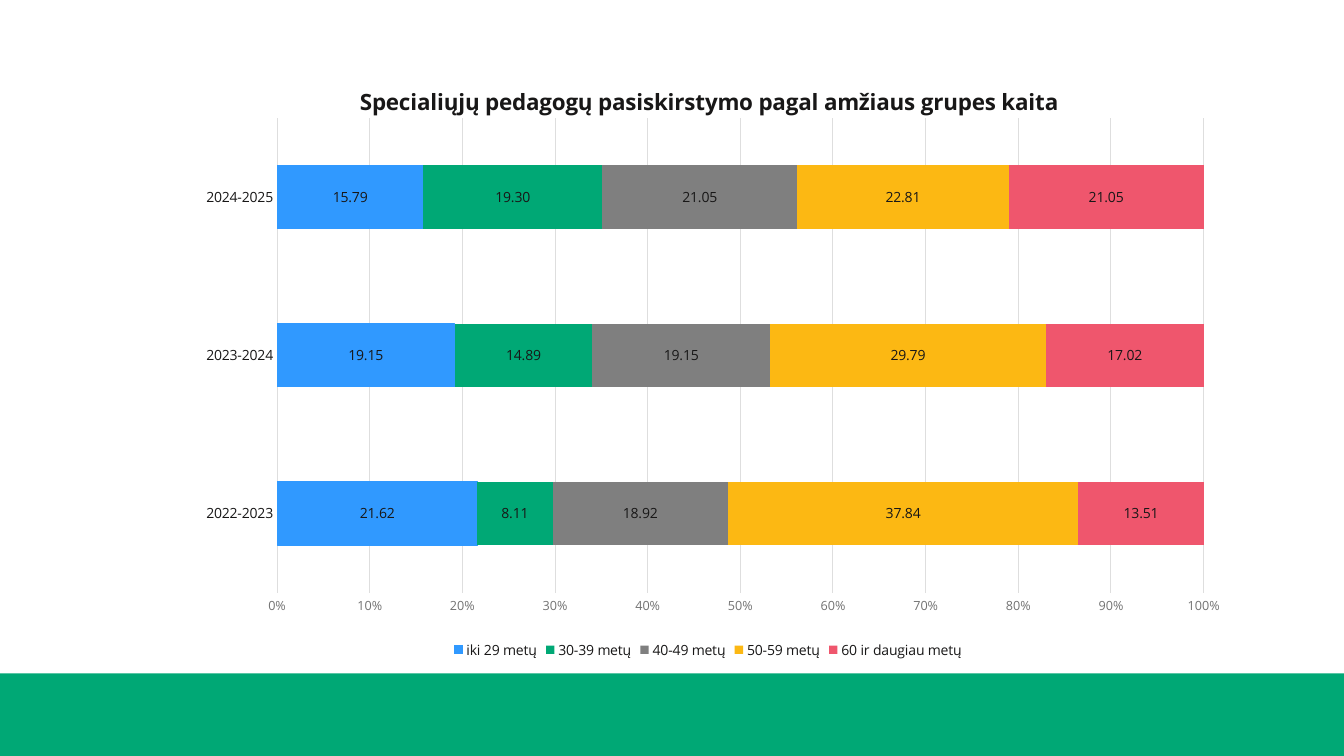
"""Build a slide with a stacked bar chart of special educators by age group."""
from dataclasses import dataclass

from lxml.etree import SubElement
from pptx import Presentation
from pptx.chart.data import CategoryChartData as ChartData
from pptx.dml.color import RGBColor
from pptx.enum.chart import XL_CHART_TYPE as ChartType
from pptx.enum.chart import XL_LEGEND_POSITION as LegendPosition
from pptx.enum.chart import XL_TICK_MARK as TickMark
from pptx.enum.shapes import MSO_SHAPE as Shape
from pptx.oxml.ns import qn
from pptx.util import Inches, Pt

WIDTH, HEIGHT = Inches(13.33), Inches(7.5)
FONT = "Open Sans"
INK, GREY, RULE, GREEN = "181717", "727272", "DEDEDE", "00A875"
YEARS = ("2022-2023", "2023-2024", "2024-2025")
TITLE = "Specialiųjų pedagogų pasiskirstymo pagal amžiaus grupes kaita"


@dataclass(frozen=True)
class Area:
    left: float
    top: float
    width: float = 0
    height: float = 0

    def on_slide(self) -> tuple[int, int, int, int]:
        return (int(WIDTH * self.left / 100), int(HEIGHT * self.top / 100),
                int(WIDTH * self.width / 100), int(HEIGHT * self.height / 100))


@dataclass(frozen=True)
class AgeGroup:
    name: str
    shares: tuple[float, ...]
    color: str


BAND = Area(0, 89.07, 100, 10.93)
CHART = Area(13.58, 7.87, 78.17, 79.87)
PLOT = Area(9, 9.7, 88.2, 78.6)
HEADING = Area(16.5, 3.5)
AGE_GROUPS = (
    AgeGroup("iki 29 metų", (21.62, 19.15, 15.79), "3099FF"),
    AgeGroup("30-39 metų", (8.11, 14.89, 19.3), GREEN),
    AgeGroup("40-49 metų", (18.92, 19.15, 21.05), "7F7F7F"),
    AgeGroup("50-59 metų", (37.84, 29.79, 22.81), "FCB813"),
    AgeGroup("60 ir daugiau metų", (13.51, 17.02, 21.05), "EF566D"),
)


def rgb(color: str) -> RGBColor:
    return RGBColor.from_string(color)


def set_font(font, size: float = 10, color: str = INK, bold: bool = False) -> None:
    font.name, font.size, font.bold = FONT, Pt(size), bold
    font.color.rgb = rgb(color)


def set_line(line, color: str) -> None:
    line.color.rgb = rgb(color)
    line.width = Pt(0.75)


def add_text(frame, text: str, **style) -> None:
    span = frame.paragraphs[0].add_run()
    span.text = text
    set_font(span.font, **style)


def place_part(part, area: Area, index: int) -> None:
    for old in part.findall(qn("c:layout")):
        part.remove(old)
    layout = SubElement(part, qn("c:layout"))
    part.insert(index, layout)
    manual = SubElement(layout, qn("c:manualLayout"))
    settings = [("xMode", "edge"), ("yMode", "edge"),
                ("x", area.left / 100), ("y", area.top / 100)]
    if area.width:
        settings.insert(0, ("layoutTarget", "inner"))
        settings += [("w", area.width / 100), ("h", area.height / 100)]
    for name, value in settings:
        SubElement(manual, qn(f"c:{name}")).set("val", str(value))


def add_band(page) -> None:
    band = page.shapes.add_shape(Shape.RECTANGLE, *BAND.on_slide())
    band.shadow.inherit = False
    band.fill.solid()
    band.fill.fore_color.rgb = rgb(GREEN)
    band.line.fill.background()


def style_axes(chart) -> None:
    years, percent = chart.category_axis, chart.value_axis
    for axis in (years, percent):
        axis.major_tick_mark = axis.minor_tick_mark = TickMark.NONE
    set_font(years.tick_labels.font)
    set_line(years.format.line, RULE)
    set_font(percent.tick_labels.font, size=9, color=GREY)
    percent.format.line.fill.background()
    percent.has_major_gridlines = True
    set_line(percent.major_gridlines.format.line, RULE)
    percent.tick_labels.number_format = "0%"
    percent.tick_labels.number_format_is_linked = False


def style_series(series, group: AgeGroup) -> None:
    series.format.fill.solid()
    series.format.fill.fore_color.rgb = rgb(group.color)
    labels = series.data_labels
    labels.show_value = True
    labels.number_format = "0.00"
    labels.number_format_is_linked = False
    set_font(labels.font)


def add_age_chart(page) -> None:
    data = ChartData(number_format="0.00")
    data.categories = YEARS
    for group in AGE_GROUPS:
        data.add_series(group.name, group.shares)
    chart = page.shapes.add_chart(
        ChartType.BAR_STACKED_100, *CHART.on_slide(), data).chart
    set_font(chart.font)

    chart.has_title = True
    heading = chart.chart_title
    add_text(heading.text_frame, TITLE, size=16, bold=True)
    heading.include_in_layout = False
    place_part(heading._element, HEADING, 1)

    chart.has_legend = True
    chart.legend.position = LegendPosition.BOTTOM
    chart.legend.include_in_layout = False
    set_font(chart.legend.font)

    style_axes(chart)
    plot = chart.plots[0]
    plot.gap_width, plot.overlap, plot.vary_by_categories = 150, 100, False
    for series, group in zip(plot.series, AGE_GROUPS):
        style_series(series, group)
    set_line(plot.series[0].format.line, AGE_GROUPS[0].color)
    place_part(chart._chartSpace.chart.plotArea, PLOT, 0)


def main() -> None:
    deck = Presentation()
    deck.slide_width, deck.slide_height = WIDTH, HEIGHT
    page = deck.slides.add_slide(deck.slide_layouts[6])
    add_band(page)
    add_age_chart(page)
    deck.save("out.pptx")


if __name__ == "__main__":
    main()
